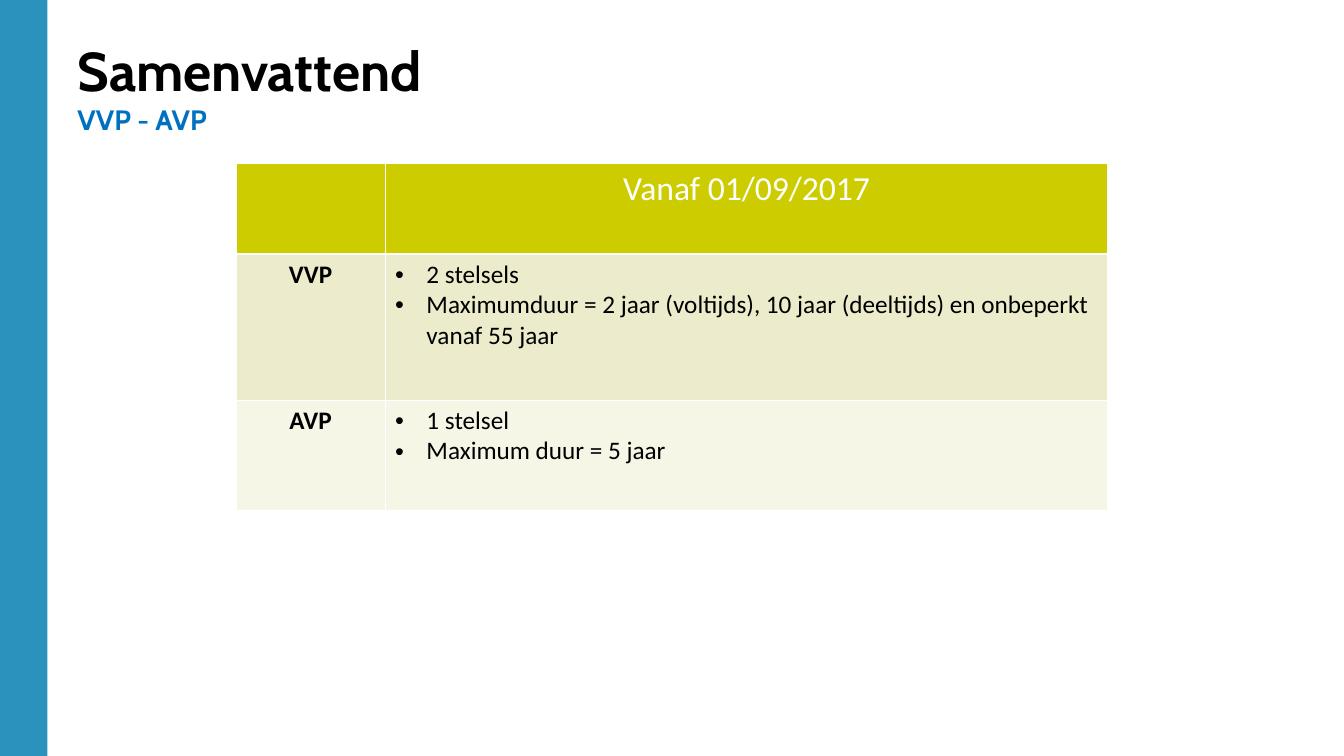
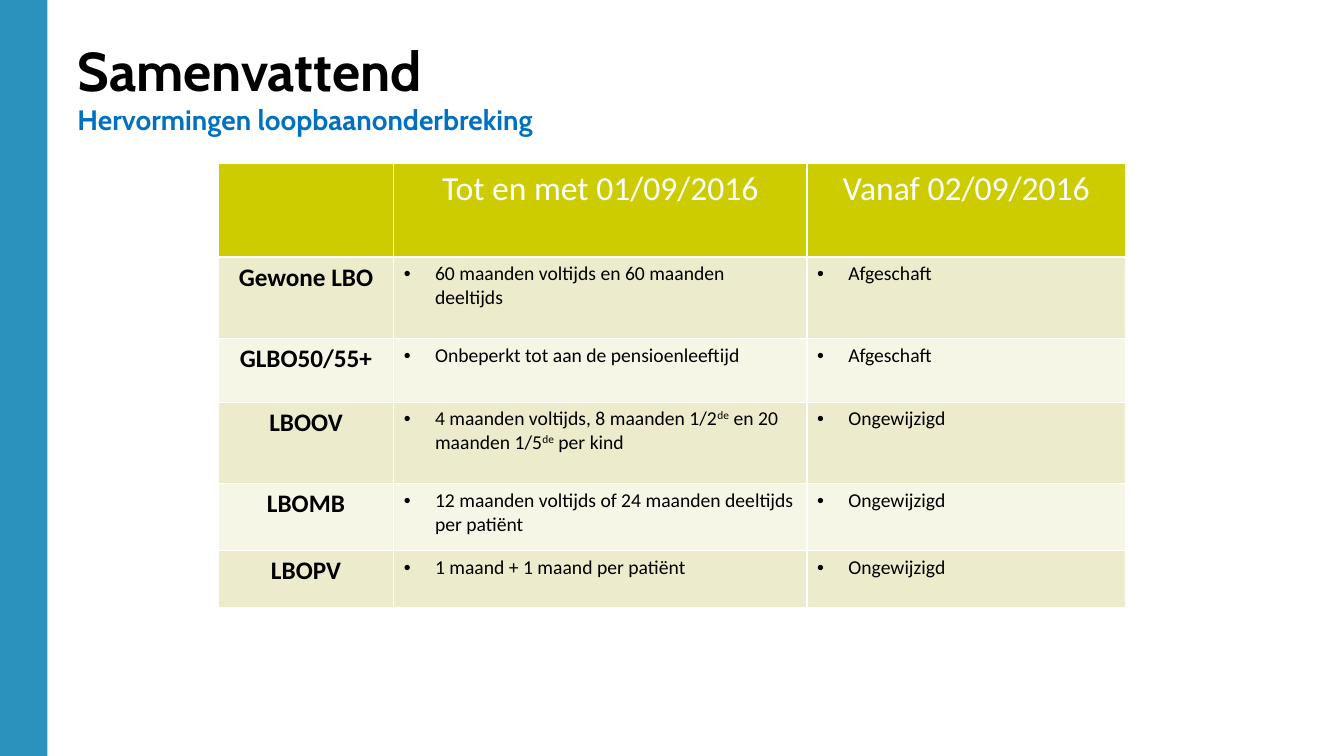
import lxml.etree
import pptx
import pptx.dml.color
import pptx.enum.shapes
import pptx.enum.text
import pptx.oxml.ns
import pptx.util

Inches = pptx.util.Inches
ALIGN = pptx.enum.text.PP_ALIGN

COLOURS = {
    "band": "2B92BE", "title": "000000", "subtitle": "0070C0",
    "header": "CCCC00", "odd": "ECECCC", "even": "F6F6E7",
    "border": "FFFFFF", "header_text": "FFFFFF", "body": "000000",
}
WIDTH, HEIGHT = 13.33, 7.5
BAND_WIDTH = 0.47
TITLE_BOX = (0.67, 0.13, 12.41, 1.25)
TABLE_TOP = 1.62
BULLET_INDENT = 0.31

FORMATS = {
    "title": {"name": "Cabin", "size": 39, "bold": True},
    "subtitle": {"name": "Cabin", "size": 20, "bold": True},
    "header_text": {"name": "Calibri", "size": 24, "bold": False},
    "label": {"name": "Calibri", "size": 18, "bold": True},
    "body": {"name": "Calibri", "size": 18, "bold": False},
}

# Text between two ^ marks is superscript; each body cell is a list of bullets.
SLIDES = [
    {
        "title": "Samenvattend",
        "subtitle": "VVP - AVP",
        "columns": [1.48, 7.17],
        "rows": [0.9, 1.45, 1.1],
        "body_size": 18,
        "header": ["", "Vanaf 01/09/2017"],
        "body": [
            ("VVP", ["2 stelsels",
                     "Maximumduur = 2 jaar (voltijds), 10 jaar (deeltijds) "
                     "en onbeperkt vanaf 55 jaar"]),
            ("AVP", ["1 stelsel", "Maximum duur = 5 jaar"]),
        ],
    },
    {
        "title": "Samenvattend",
        "subtitle": "Hervormingen loopbaanonderbreking",
        "columns": [1.74, 4.1, 3.16],
        "rows": [0.93, 0.81, 0.63, 0.81, 0.66, 0.57],
        "body_size": 14,
        "header": ["", "Tot en met 01/09/2016", "Vanaf 02/09/2016"],
        "body": [
            ("Gewone LBO", ["60 maanden voltijds en 60 maanden deeltijds"],
             ["Afgeschaft"]),
            ("GLBO50/55+", ["Onbeperkt tot aan de pensioenleeftijd"],
             ["Afgeschaft"]),
            ("LBOOV", ["4 maanden voltijds, 8 maanden 1/2^de^ en 20 maanden "
                       "1/5^de^ per kind"], ["Ongewijzigd"]),
            ("LBOMB", ["12 maanden voltijds of 24 maanden deeltijds per patiënt"],
             ["Ongewijzigd"]),
            ("LBOPV", ["1 maand + 1 maand per patiënt"], ["Ongewijzigd"]),
        ],
    },
]


def rgb(name):
    return pptx.dml.color.RGBColor.from_string(COLOURS[name])


def add_xml(parent, tag, **attributes):
    return lxml.etree.SubElement(parent, pptx.oxml.ns.qn(tag), attributes)


def add_spans(para, text, style, colour, **changes):
    for index, piece in enumerate(text.split("^")):
        span = para.add_run()
        span.text = piece
        for key, value in {**FORMATS[style], **changes}.items():
            setattr(span.font, key, pptx.util.Pt(value) if key == "size" else value)
        span.font.color.rgb = rgb(colour)
        if index % 2:
            span.font._element.set("baseline", "30000")


def add_bullet(para):
    indent = Inches(BULLET_INDENT)
    properties = para._p.get_or_add_pPr()
    properties.set("marL", str(indent))
    properties.set("indent", str(-indent))
    add_xml(properties, "a:buFont", typeface="Arial")
    add_xml(properties, "a:buChar", char="•")


def paint_cell(cell, colour):
    """Give the cell white borders and a plain fill."""
    properties = cell._tc.get_or_add_tcPr()
    for side in ("a:lnL", "a:lnR", "a:lnT", "a:lnB"):
        line = add_xml(properties, side, w=str(pptx.util.Pt(1)))
        add_xml(add_xml(line, "a:solidFill"), "a:srgbClr", val=COLOURS["border"])
    cell.fill.solid()
    cell.fill.fore_color.rgb = rgb(colour)


def write_centred(cell, text, style, colour):
    para = cell.text_frame.paragraphs[0]
    para.alignment = ALIGN.CENTER
    if text:
        add_spans(para, text, style, colour)


def write_bullets(cell, items, size):
    frame = cell.text_frame
    for index, item in enumerate(items):
        para = frame.add_paragraph() if index else frame.paragraphs[0]
        add_bullet(para)
        add_spans(para, item, "body", "body", size=size)


def add_band(page):
    band = page.shapes.add_shape(pptx.enum.shapes.MSO_SHAPE.RECTANGLE, 0, 0,
                                 Inches(BAND_WIDTH), Inches(HEIGHT))
    band.shadow.inherit = False
    band.fill.solid()
    band.fill.fore_color.rgb = rgb("band")
    band.line.fill.background()


def add_title(page, title, subtitle):
    frame = page.shapes.add_textbox(*map(Inches, TITLE_BOX)).text_frame
    frame.word_wrap = True
    frame.vertical_anchor = pptx.enum.text.MSO_ANCHOR.BOTTOM
    frame.margin_bottom = Inches(0.03)
    para = frame.paragraphs[0]
    add_spans(para, title, "title", "title")
    para.add_line_break()
    add_spans(para, subtitle, "subtitle", "subtitle")


def add_summary_table(page, content):
    columns, rows = content["columns"], content["rows"]
    left = (WIDTH - sum(columns)) / 2
    table = page.shapes.add_table(
        len(rows), len(columns), Inches(left), Inches(TABLE_TOP),
        Inches(sum(columns)), Inches(sum(rows))).table
    table.horz_banding = False
    for column, width in zip(table.columns, columns):
        column.width = Inches(width)
    for row, height in zip(table.rows, rows):
        row.height = Inches(height)

    for cell, text in zip(table.rows[0].cells, content["header"]):
        paint_cell(cell, "header")
        write_centred(cell, text, "header_text", "header_text")
    for number, (label, *lists) in enumerate(content["body"], start=1):
        cells = list(table.rows[number].cells)
        for cell in cells:
            paint_cell(cell, "odd" if number % 2 else "even")
        write_centred(cells[0], label, "label", "body")
        for cell, items in zip(cells[1:], lists):
            write_bullets(cell, items, content["body_size"])


def main():
    deck = pptx.Presentation()
    deck.slide_width, deck.slide_height = Inches(WIDTH), Inches(HEIGHT)
    for content in SLIDES:
        page = deck.slides.add_slide(deck.slide_layouts[6])
        add_band(page)
        add_title(page, content["title"], content["subtitle"])
        add_summary_table(page, content)
    deck.save("out.pptx")


if __name__ == "__main__":
    main()
